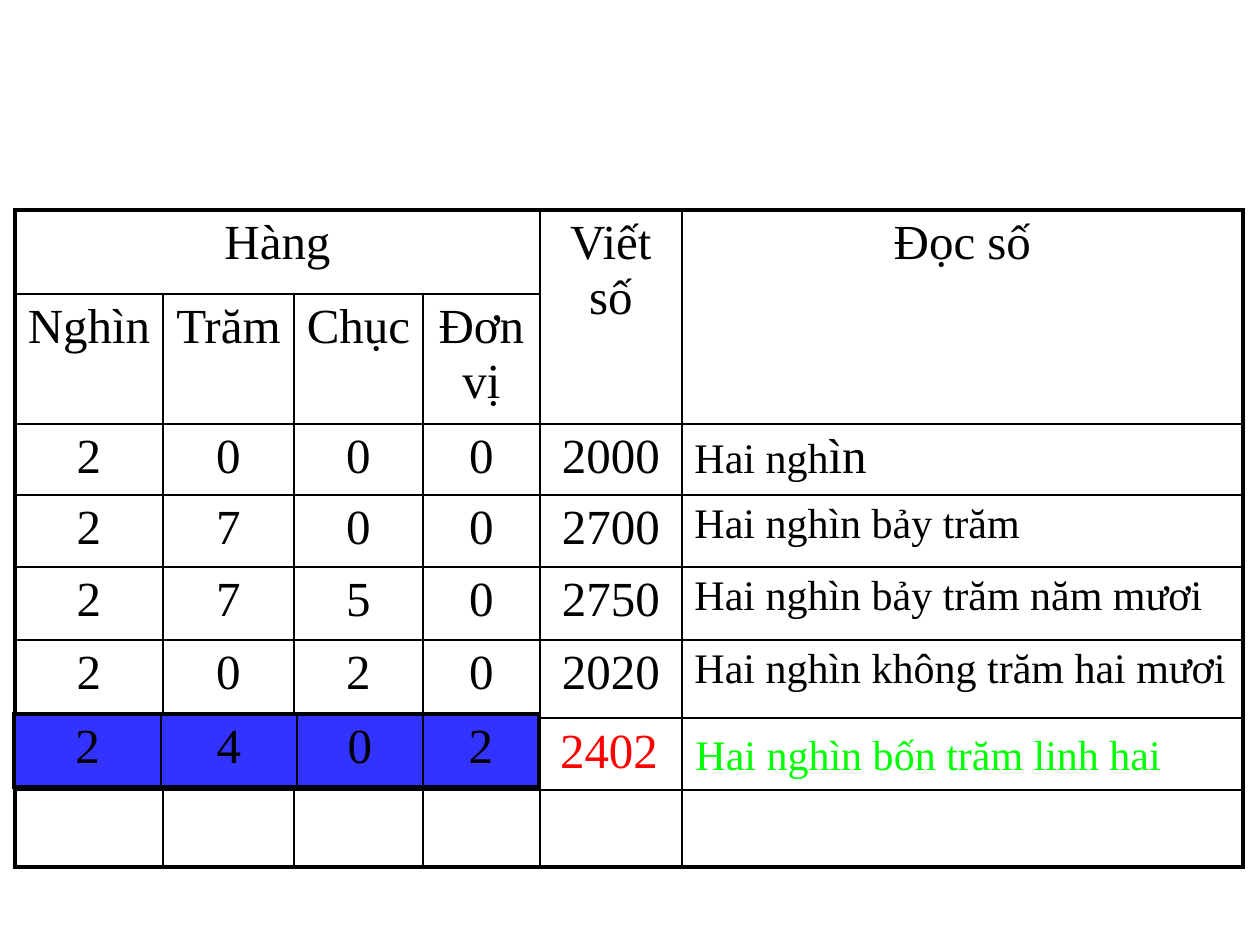
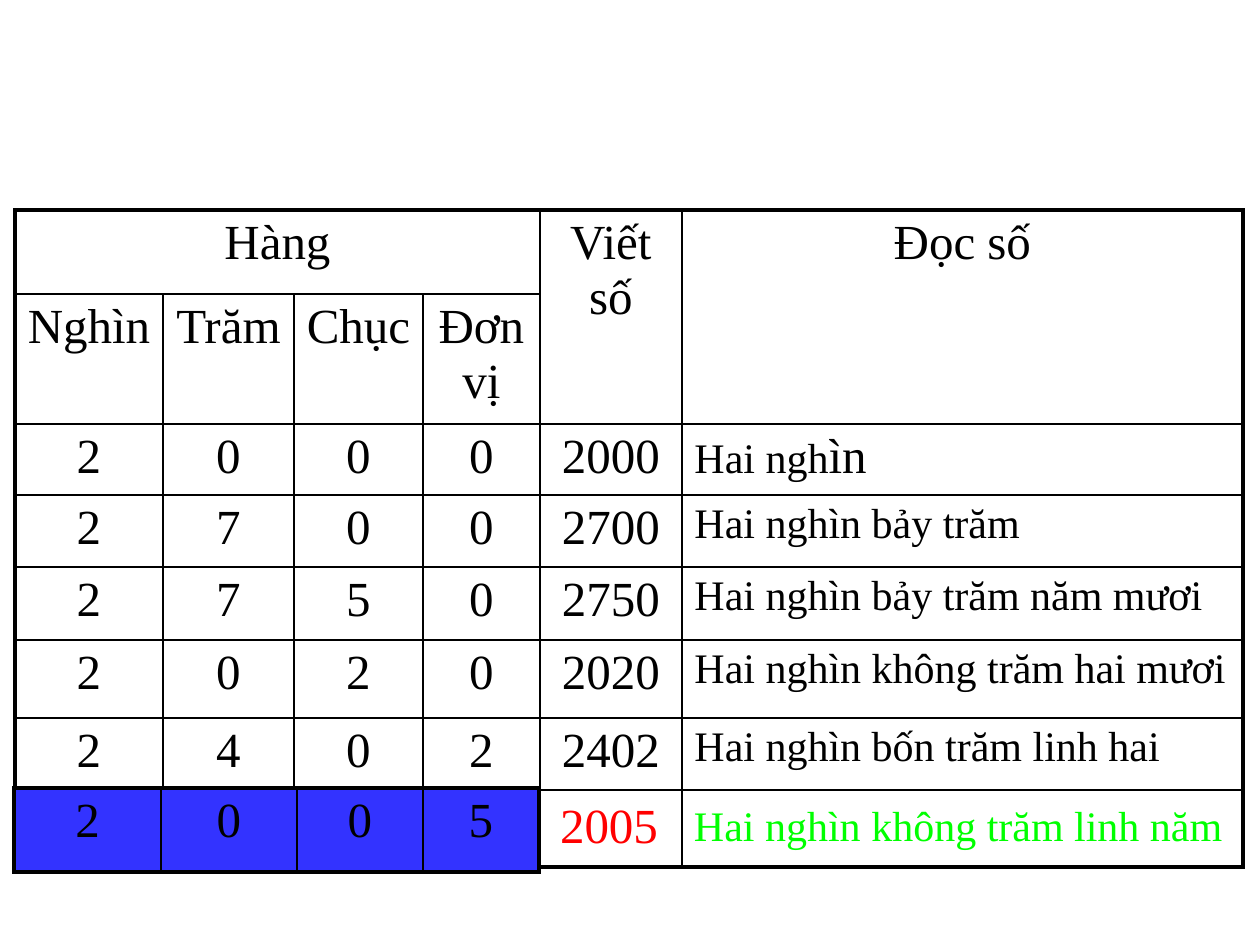
import lxml.etree
import pptx
import pptx.dml.color
import pptx.enum.shapes
import pptx.enum.text
import pptx.oxml.ns
import pptx.util

PX = 914400 / 126
FONT = "Times New Roman"
BLACK = pptx.dml.color.RGBColor(0x00, 0x00, 0x00)
WHITE = pptx.dml.color.RGBColor(0xFF, 0xFF, 0xFF)
BLUE = pptx.dml.color.RGBColor(0x33, 0x33, 0xFF)
RED = pptx.dml.color.RGBColor(0xFF, 0x00, 0x00)
GREEN = pptx.dml.color.RGBColor(0x00, 0xFF, 0x00)
CENTER = pptx.enum.text.PP_ALIGN.CENTER
LEFT = pptx.enum.text.PP_ALIGN.LEFT
DIGIT_SIZE, READING_SIZE = 28, 24
THIN, THICK = pptx.util.Pt(1), pptx.util.Pt(2.25)

GRID_LEFT, GRID_TOP = 15, 210
GRID_COLS = [148, 131, 129, 117, 142, 561]
GRID_ROWS = [84, 130, 71, 72, 73, 78, 72, 77]
ANSWER_LEFT = 14
ANSWER_COLS = [147, 136, 126, 116]

HEADINGS = [
    ["Hàng", "", "", "", "Viết số", "Đọc số"],
    ["Nghìn", "Trăm", "Chục", "Đơn vị", "", ""],
]
NUMBERS = [
    ("2000", "Hai ngh"),
    ("2700", "Hai nghìn bảy trăm"),
    ("2750", "Hai nghìn bảy trăm năm mươi"),
    ("2020", "Hai nghìn không trăm hai mươi"),
    ("2402", "Hai nghìn bốn trăm linh hai"),
    ("2005", "Hai nghìn không trăm linh năm"),
]
# numbers already filled in, answer row top and height, number top, reading left and top
SLIDES = [
    (4, 714, 73, 728, 814, 733),
    (5, 788, 84, 803, 844, 804),
]


def px(n):
    return pptx.util.Emu(round(n * PX))


def add_grid(s, left, top, cols, rows, texts, fill=None):
    """Add a table with thin inner lines and a thick frame."""
    frame = s.shapes.add_table(len(rows), len(cols), px(left), px(top),
                               px(sum(cols)), px(sum(rows)))
    table = frame.table
    table.first_row = table.horz_banding = False
    for column, width in zip(table.columns, cols):
        column.width = px(width)
    for row, height in zip(table.rows, rows):
        row.height = px(height)
    for i in range(len(rows)):
        for j in range(len(cols)):
            cell = table.cell(i, j)
            if fill is None:
                cell.fill.background()
            else:
                cell.fill.solid()
                cell.fill.fore_color.rgb = fill
            on_frame = {"lnL": j == 0, "lnR": j == len(cols) - 1,
                        "lnT": i == 0, "lnB": i == len(rows) - 1}
            tc_pr = cell._tc.get_or_add_tcPr()
            for k, (tag, thick) in enumerate(on_frame.items()):
                ln = lxml.etree.Element(pptx.oxml.ns.qn("a:" + tag),
                                        w=str(int(THICK if thick else THIN)))
                solid = lxml.etree.SubElement(ln, pptx.oxml.ns.qn("a:solidFill"))
                lxml.etree.SubElement(solid, pptx.oxml.ns.qn("a:srgbClr"), val=str(BLACK))
                tc_pr.insert(k, ln)
            if i < len(texts) and texts[i][j]:
                is_reading = i > 1 and j == 5
                p = cell.text_frame.paragraphs[0]
                p.text = texts[i][j]
                p.alignment = LEFT if is_reading else CENTER
                font = p.runs[0].font
                font.name, font.color.rgb = FONT, BLACK
                font.size = pptx.util.Pt(READING_SIZE if is_reading else DIGIT_SIZE)
    return table


prs = pptx.Presentation()
prs.slide_width, prs.slide_height = px(1260), px(945)

for filled, answer_top, answer_height, number_top, reading_left, reading_top in SLIDES:
    s = prs.slides.add_slide(prs.slide_layouts[6])
    texts = HEADINGS + [[*number, number, reading] for number, reading in NUMBERS[:filled]]
    table = add_grid(s, GRID_LEFT, GRID_TOP, GRID_COLS, GRID_ROWS, texts)
    table.cell(0, 0).merge(table.cell(0, 3))
    for j in (4, 5):
        table.cell(0, j).merge(table.cell(1, j))

    # The first reading ends in larger letters
    r = table.cell(2, 5).text_frame.paragraphs[0].add_run()
    r.text = "ìn"
    r.font.name, r.font.size = FONT, pptx.util.Pt(DIGIT_SIZE)
    r.font.color.rgb = BLACK

    number, reading = NUMBERS[filled]
    add_grid(s, ANSWER_LEFT, answer_top, ANSWER_COLS, [answer_height], [number], BLUE)

    for text, left, top, width, size, color in [
        (number, 546, number_top, 126, DIGIT_SIZE, RED),
        (reading + " ", reading_left, reading_top, 239, READING_SIZE, GREEN),
    ]:
        sp = s.shapes.add_shape(pptx.enum.shapes.MSO_SHAPE.RECTANGLE,
                                px(left), px(top), px(width), px(42))
        sp.shadow.inherit = False
        sp.fill.solid()
        sp.fill.fore_color.rgb = WHITE
        sp.line.color.rgb = WHITE
        sp.line.width = pptx.util.Pt(0.75)
        tf = sp.text_frame
        tf.text = text
        tf.word_wrap = False
        tf.vertical_anchor = pptx.enum.text.MSO_ANCHOR.MIDDLE
        p = tf.paragraphs[0]
        p.alignment = CENTER
        font = p.runs[0].font
        font.name, font.size, font.color.rgb = FONT, pptx.util.Pt(size), color

prs.save("out.pptx")
